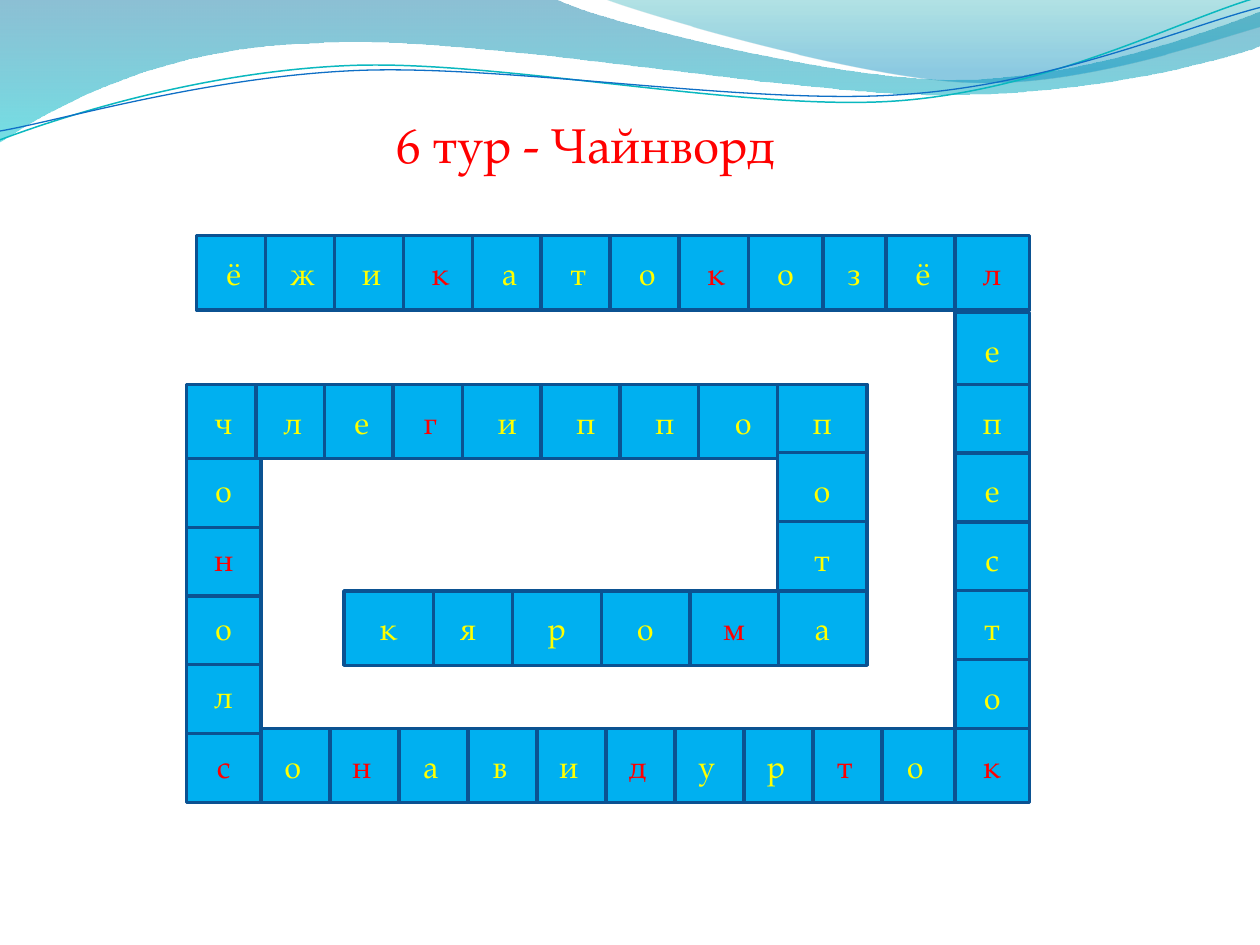
from math import cos, radians, sin

from lxml import etree
from pptx import Presentation
from pptx.dml.color import RGBColor
from pptx.enum.shapes import MSO_SHAPE
from pptx.enum.text import MSO_ANCHOR, MSO_AUTO_SIZE, PP_ALIGN
from pptx.oxml.ns import qn
from pptx.util import Inches, Pt

RECTANGLE = MSO_SHAPE.RECTANGLE
MIDDLE = MSO_ANCHOR.MIDDLE
CENTER = PP_ALIGN.CENTER
GROW = MSO_AUTO_SIZE.SHAPE_TO_FIT_TEXT

THEME = {
    "font": "TeX Gyre Pagella",
    "title_size": 28,
    "letter_size": 18,
    "accent": "FF0000",
    "letter": "FFFF00",
    "cell": "00B0F0",
    "border": "0B5292",
    "border_width": 2,
    "deep_wave": [(0, "0074A1", 45), (1, "00C6CF", 55)],
    "light_wave": [(0, "00A1A9", 30), (0.8, "008BBF", 45)],
    "teal_line": ("0AB8BF", 0.85),
    "blue_line": ("0F6FC6", 0.75),
}

TITLE = "6 тур - Чайнворд"

CHAIN = [
    ("ёжикаток", {3, 7}, (1.56, 1.87), (5.39, 1.87), 0.59),
    ("зёл", {2}, (6.48, 1.87), (7.58, 1.87), 0.59),
    ("о", set(), (5.94, 1.87), (5.94, 1.87), 0.59),
    ("е", set(), (7.58, 2.48), (7.58, 2.48), 0.59),
    ("песток", {5}, (7.58, 3.05), (7.58, 5.78), 0.59),
    ("о", set(), (6.95, 5.78), (6.95, 5.78), 0.63),
    ("трудиванос", {0, 3, 7, 9}, (6.41, 5.78), (1.48, 5.78), 0.59),
    ("лоноч", {2}, (1.48, 5.23), (1.48, 3.05), 0.59),
    ("лег", {2}, (2.03, 3.05), (3.12, 3.05), 0.59),
    ("иппоп", set(), (3.67, 3.05), (6.17, 3.05), 0.71),
    ("ота", set(), (6.17, 3.59), (6.17, 4.69), 0.71),
    ("моря", {0}, (5.47, 4.69), (3.36, 4.69), 0.71),
    ("к", set(), (2.73, 4.69), (2.73, 4.69), 0.71),
]
CELL_HEIGHT = 0.59

DEEP_WAVE = [
    [(0, 0)],
    [(4.4, -0.01)],
    [(4.76, 0.17), (6.64, 0.63), (7.58, 0.63)],
    [(8.53, 0.63), (9.58, 0.26), (10, 0.09)],
    [(10.01, 0.36)],
    [(9.83, 0.44), (8.7, 0.76), (7.46, 0.75)],
    [(6.22, 0.75), (3.82, 0.28), (2.57, 0.34)],
    [(1.29, 0.36), (0.46, 0.83), (-0.01, 1.13)],
    [(0, 0)],
]
LIGHT_WAVE = [
    [(4.79, -0.01)],
    [(5.09, 0.11), (6.82, 0.62), (7.69, 0.65)],
    [(8.56, 0.69), (9.61, 0.32), (10, 0.21)],
    [(10, 0)],
    [(4.79, -0.01)],
]
TEAL_LINE = [
    [(0, 1.11)],
    [(0.48, 0.93), (1.58, 0.57), (2.77, 0.52)],
    [(3.95, 0.47), (5.93, 0.89), (7.13, 0.8)],
    [(8.33, 0.71), (9.38, 0.15), (9.98, -0.02)],
]
BLUE_LINE = [
    [(0, 1.04)],
    [(0.47, 0.96), (1.64, 0.61), (2.83, 0.56)],
    [(4.03, 0.51), (5.97, 0.84), (7.17, 0.75)],
    [(8.36, 0.67), (9.41, 0.21), (10, 0.06)],
]
TEAL_CENTER = (4.99, 0.57)
BLUE_CENTER = (5, 0.59)
LINE_TILT = 2.7


def rgb(value):
    return RGBColor.from_string(value)


def level(outline, center):
    cx, cy = center
    c, s = cos(radians(LINE_TILT)), sin(radians(LINE_TILT))
    return [
        [(cx + (x - cx) * c - (y - cy) * s, cy + (x - cx) * s + (y - cy) * c)
         for x, y in stretch]
        for stretch in outline
    ]


def add_outline(slide, outline, closed):
    start, *rest = [(Inches(x), Inches(y)) for stretch in outline for x, y in stretch]
    builder = slide.shapes.build_freeform(*start)
    builder.add_line_segments(rest, close=closed)
    shape = builder.convert_to_shape()
    shape.shadow.inherit = False
    segments = iter(list(shape._element.spPr.iter(qn("a:lnTo"))))
    for stretch in outline[1:]:
        pieces = [next(segments) for _ in stretch]
        if len(pieces) == 3:
            curve = etree.Element(qn("a:cubicBezTo"))
            pieces[0].addprevious(curve)
            for piece in pieces:
                curve.append(piece[0])
                piece.getparent().remove(piece)
    return shape


def add_wave(slide, outline, stops):
    wave = add_outline(slide, outline, True)
    wave.line.fill.background()
    wave.fill.gradient()
    wave.fill.gradient_angle = 270
    for stop, (position, color, _) in zip(wave.fill.gradient_stops, stops):
        stop.position = position
        stop.color.rgb = rgb(color)
    colors = list(wave._element.spPr.iter(qn("a:srgbClr")))
    for color, (_, _, opacity) in zip(colors, stops):
        etree.SubElement(color, qn("a:alpha")).set("val", str(opacity * 1000))


def add_wave_line(slide, outline, center, stroke):
    wave_line = add_outline(slide, level(outline, center), False)
    color, width = stroke
    wave_line.rotation = 360 - LINE_TILT
    wave_line.fill.background()
    wave_line.line.color.rgb = rgb(color)
    wave_line.line.width = Pt(width)


def write(frame, text, size, color):
    paragraph = frame.paragraphs[0]
    paragraph.text = text
    paragraph.alignment = CENTER
    paragraph.font.name = THEME["font"]
    paragraph.font.size = Pt(size)
    paragraph.font.color.rgb = rgb(color)


def add_title(slide):
    box = slide.shapes.add_textbox(Inches(2.11), Inches(0.86), Inches(5.08), Inches(0.57))
    box.text_frame.word_wrap = True
    box.text_frame.auto_size = GROW
    write(box.text_frame, TITLE, THEME["title_size"], THEME["accent"])


def add_cell(slide, letter, x, y, width, color):
    cell = slide.shapes.add_shape(
        RECTANGLE, Inches(x), Inches(y), Inches(width), Inches(CELL_HEIGHT))
    cell.shadow.inherit = False
    cell.fill.solid()
    cell.fill.fore_color.rgb = rgb(THEME["cell"])
    cell.line.color.rgb = rgb(THEME["border"])
    cell.line.width = Pt(THEME["border_width"])
    cell.text_frame.vertical_anchor = MIDDLE
    write(cell.text_frame, letter, THEME["letter_size"], color)


def add_chain(slide):
    for letters, accented, first, last, width in CHAIN:
        gaps = max(len(letters) - 1, 1)
        for index, letter in enumerate(letters):
            x, y = (a + (b - a) * index / gaps for a, b in zip(first, last))
            color = THEME["accent" if index in accented else "letter"]
            add_cell(slide, letter, x, y, width, color)


def main():
    deck = Presentation()
    deck.slide_width, deck.slide_height = Inches(10), Inches(7.5)
    slide = deck.slides.add_slide(deck.slide_layouts[6])
    add_wave(slide, DEEP_WAVE, THEME["deep_wave"])
    add_wave(slide, LIGHT_WAVE, THEME["light_wave"])
    add_wave_line(slide, TEAL_LINE, TEAL_CENTER, THEME["teal_line"])
    add_wave_line(slide, BLUE_LINE, BLUE_CENTER, THEME["blue_line"])
    add_title(slide)
    add_chain(slide)
    deck.save("out.pptx")


if __name__ == "__main__":
    main()
